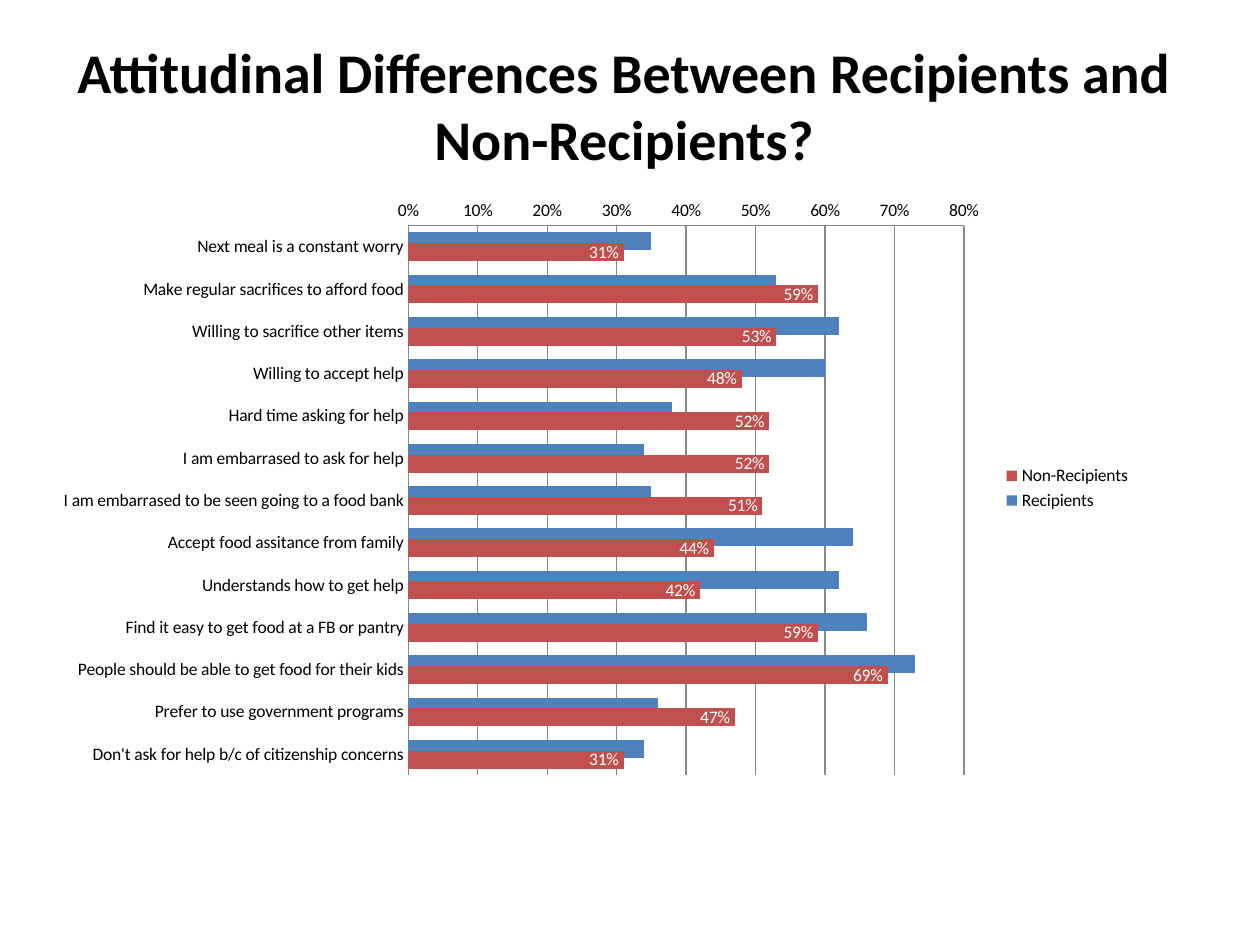
from pptx import Presentation
from pptx.chart.data import CategoryChartData
from pptx.dml.color import RGBColor
from pptx.enum.chart import XL_CHART_TYPE, XL_LABEL_POSITION, XL_LEGEND_POSITION, XL_TICK_MARK
from pptx.enum.text import MSO_ANCHOR, PP_ALIGN
from pptx.util import Inches, Pt

TITLE = "Attitudinal Differences Between Recipients and Non-Recipients?"
SERIES = {"Recipients": "4F81BD", "Non-Recipients": "C0504D"}
ATTITUDES = [
    ("Next meal is a constant worry", 0.35, 0.31),
    ("Make regular sacrifices to afford food", 0.53, 0.59),
    ("Willing to sacrifice other items", 0.62, 0.53),
    ("Willing to accept help", 0.60, 0.48),
    ("Hard time asking for help", 0.38, 0.52),
    ("I am embarrased to ask for help", 0.34, 0.52),
    ("I am embarrased to be seen going to a food bank", 0.35, 0.51),
    ("Accept food assitance from family", 0.64, 0.44),
    ("Understands how to get help", 0.62, 0.42),
    ("Find it easy to get food at a FB or pantry", 0.66, 0.59),
    ("People should be able to get food for their kids", 0.73, 0.69),
    ("Prefer to use government programs", 0.36, 0.47),
    ("Don't ask for help b/c of citizenship concerns", 0.34, 0.31),
]
TITLE_BOX = (0.33, 0.25, 9.25, 0.72)
CHART_BOX = (0.33, 1.5, 8.75, 4.75)


def color(value):
    return RGBColor.from_string(value)


def style_font(font, size, value="000000", bold=False):
    font.name = "Calibri"
    font.size = Pt(size)
    font.bold = bold
    font.color.rgb = color(value)


def style_line(line):
    line.color.rgb = color("888888")
    line.width = Pt(0.75)


def add_title(slide):
    text_frame = slide.shapes.add_textbox(*map(Inches, TITLE_BOX)).text_frame
    text_frame.word_wrap = True
    text_frame.vertical_anchor = MSO_ANCHOR.TOP
    text_frame.text = TITLE
    paragraph = text_frame.paragraphs[0]
    paragraph.alignment = PP_ALIGN.CENTER
    style_font(paragraph.runs[0].font, 32, bold=True)


def add_attitude_chart(slide):
    labels, *columns = zip(*ATTITUDES)
    data = CategoryChartData(number_format="0%")
    data.categories = labels
    for name, values in zip(SERIES, columns):
        data.add_series(name, values)
    chart = slide.shapes.add_chart(
        XL_CHART_TYPE.BAR_CLUSTERED, *map(Inches, CHART_BOX), data
    ).chart
    style_font(chart.font, 10)
    chart.has_title = False
    chart.has_legend = True
    chart.legend.position = XL_LEGEND_POSITION.RIGHT
    chart.legend.include_in_layout = False
    style_font(chart.legend.font, 10)

    for axis in (chart.category_axis, chart.value_axis):
        axis.major_tick_mark = axis.minor_tick_mark = XL_TICK_MARK.NONE
        style_font(axis.tick_labels.font, 10)
        style_line(axis.format.line)
    chart.category_axis.reverse_order = True
    chart.value_axis.minimum_scale = 0
    chart.value_axis.maximum_scale = 0.8
    chart.value_axis.major_unit = 0.1
    chart.value_axis.tick_labels.number_format = "0%"
    chart.value_axis.tick_labels.number_format_is_linked = False
    chart.value_axis.has_major_gridlines = True
    style_line(chart.value_axis.major_gridlines.format.line)

    plot = chart.plots[0]
    plot.vary_by_categories = False
    plot.gap_width = 75
    plot.overlap = 40
    for series, fill in zip(plot.series, SERIES.values()):
        series.format.fill.solid()
        series.format.fill.fore_color.rgb = color(fill)
    data_labels = plot.series[1].data_labels
    data_labels.show_value = True
    data_labels.position = XL_LABEL_POSITION.INSIDE_END
    data_labels.number_format = "0%"
    data_labels.number_format_is_linked = False
    style_font(data_labels.font, 10, "FFFFFF")


def main():
    """Build the slide comparing attitudes of recipients and non-recipients."""
    presentation = Presentation()
    presentation.slide_width = Inches(10)
    presentation.slide_height = Inches(7.5)
    slide = presentation.slides.add_slide(presentation.slide_layouts[6])
    add_title(slide)
    add_attitude_chart(slide)
    presentation.save("out.pptx")


if __name__ == "__main__":
    main()
